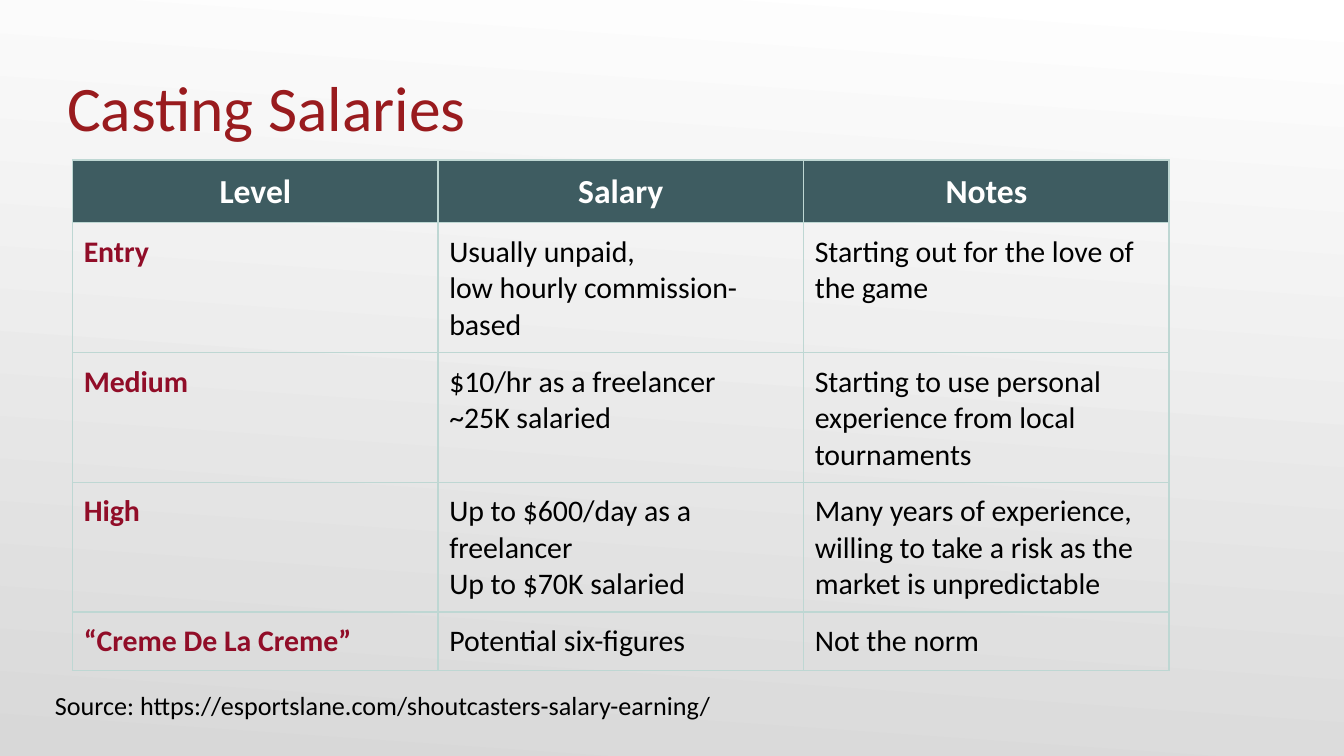
from lxml import etree
from pptx import Presentation, util as u
from pptx.dml.color import RGBColor
from pptx.enum import text
from pptx.oxml import ns

WHITE = RGBColor(0xFF, 0xFF, 0xFF)
GREY = RGBColor(0xD8, 0xD8, 0xD8)
BLACK = RGBColor(0, 0, 0)
TITLE_RED = RGBColor(0x99, 0x1B, 0x1E)
LEVEL_RED = RGBColor(0x91, 0x0D, 0x28)
TEAL = RGBColor(0x3E, 0x5C, 0x61)
BORDER = RGBColor(0xBE, 0xD7, 0xD3)

COLUMN = 2.72
ROWS = [0.46, 0.93, 0.96, 0.96, 0.43]
CONTENT = [
    ["Level", "Salary", "Notes"],
    ["Entry", "Usually unpaid,\nlow hourly commission-based",
     "Starting out for the love of the game"],
    ["Medium", "$10/hr as a freelancer\n~25K salaried",
     "Starting to use personal experience from local tournaments"],
    ["High", "Up to $600/day as a freelancer\nUp to $70K salaried",
     "Many years of experience, willing to take a risk as the market is unpredictable"],
    ["“Creme De La Creme”", "Potential six-figures", "Not the norm"],
]


def add_run(paragraph, words, size, color, bold=False):
    run = paragraph.add_run()
    run.text = words
    run.font.name = "Calibri"
    run.font.size = u.Pt(size)
    run.font.bold = bold
    run.font.color.rgb = color


def add_border(cell):
    properties = cell._tc.get_or_add_tcPr()
    for side in ("a:lnL", "a:lnR", "a:lnT", "a:lnB"):
        line = etree.SubElement(properties, ns.qn(side), w=str(u.Pt(1)))
        fill = etree.SubElement(line, ns.qn("a:solidFill"))
        etree.SubElement(fill, ns.qn("a:srgbClr"), val=str(BORDER))


presentation = Presentation()
presentation.slide_width = u.Inches(10)
presentation.slide_height = presentation.slide_width * 9 // 16
slide = presentation.slides.add_slide(presentation.slide_layouts[6])

background = slide.background.fill
background.gradient()
background.gradient_angle = 360 - 94
for stop, color in zip(background.gradient_stops, (WHITE, GREY)):
    stop.color.rgb = color

title = slide.shapes.add_textbox(u.Inches(0.5), u.Inches(0.34), u.Inches(9), u.Inches(0.73))
frame = title.text_frame
frame.word_wrap = True
frame.vertical_anchor = text.MSO_ANCHOR.BOTTOM
frame.margin_left = frame.margin_right = frame.margin_bottom = 0
frame.margin_top = u.Inches(0.05)
add_run(frame.paragraphs[0], "Casting Salaries", 34, TITLE_RED)

table = slide.shapes.add_table(
    len(ROWS), 3, u.Inches(0.54), u.Inches(1.19),
    u.Inches(3 * COLUMN), u.Inches(sum(ROWS))).table
for column in table.columns:
    column.width = u.Inches(COLUMN)
for row, height in zip(table.rows, ROWS):
    row.height = u.Inches(height)

for row_index, entries in enumerate(CONTENT):
    header = row_index == 0
    for column_index, entry in enumerate(entries):
        cell = table.cell(row_index, column_index)
        cell.margin_left = cell.margin_right = u.Pt(6)
        cell.margin_top = cell.margin_bottom = u.Pt(6)
        add_border(cell)
        level = column_index == 0
        if header:
            cell.fill.solid()
            cell.fill.fore_color.rgb = TEAL
            size, color = 18, WHITE
        else:
            cell.fill.background()
            size, color = 16, LEVEL_RED if level else BLACK
        for line_index, words in enumerate(entry.split("\n")):
            frame = cell.text_frame
            paragraph = frame.add_paragraph() if line_index else frame.paragraphs[0]
            paragraph.alignment = text.PP_ALIGN.CENTER if header else text.PP_ALIGN.LEFT
            add_run(paragraph, words, size, color, header or level)

source = slide.shapes.add_textbox(u.Inches(0.31), u.Inches(5.03), u.Inches(6.04), u.Inches(0.44))
frame = source.text_frame
frame.word_wrap = True
frame.auto_size = text.MSO_AUTO_SIZE.SHAPE_TO_FIT_TEXT
frame.margin_left = frame.margin_right = u.Inches(0.1)
frame.margin_top = frame.margin_bottom = u.Inches(0.1)
add_run(frame.paragraphs[0],
        "Source: https://esportslane.com/shoutcasters-salary-earning/", 14, BLACK)

presentation.save("out.pptx")
